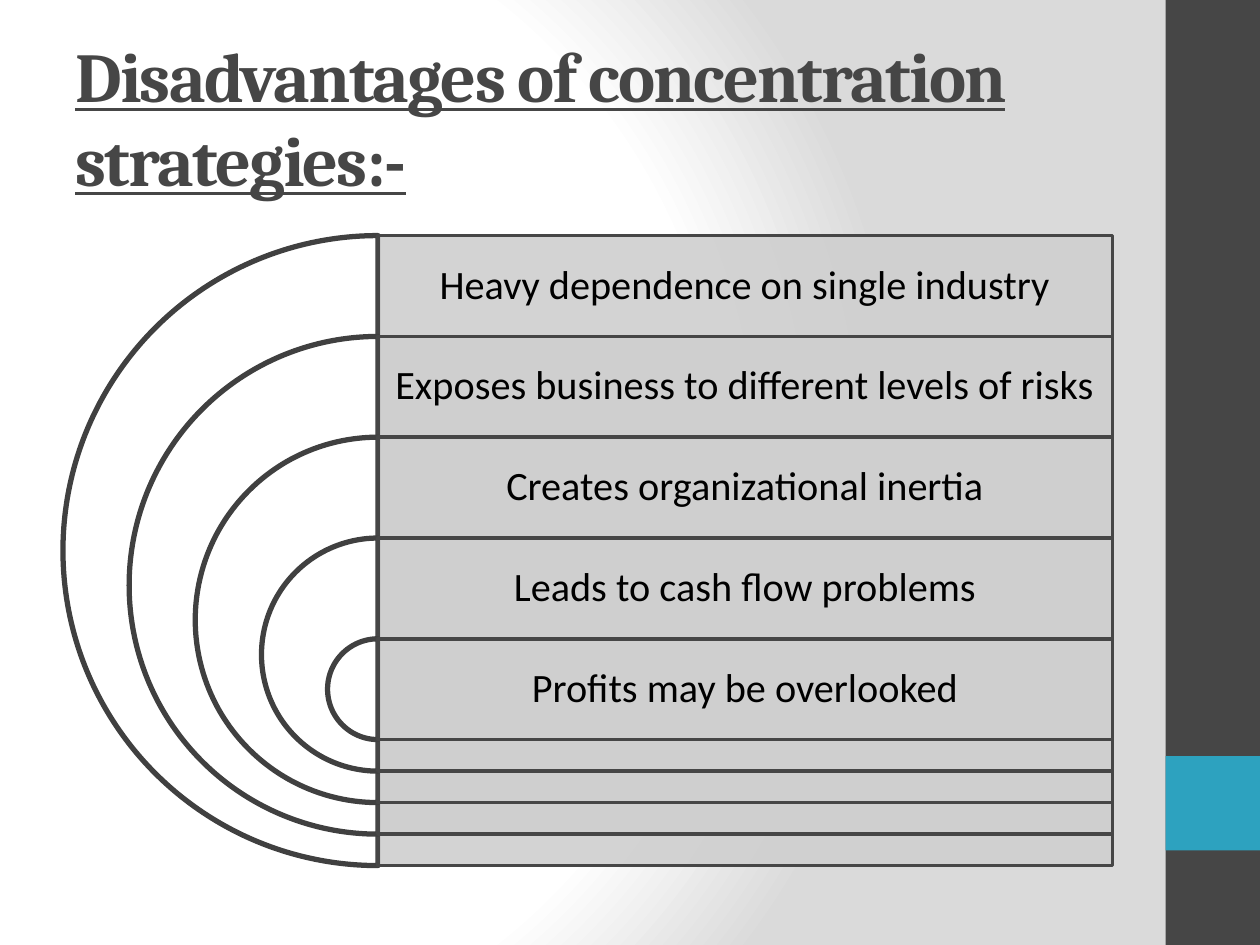
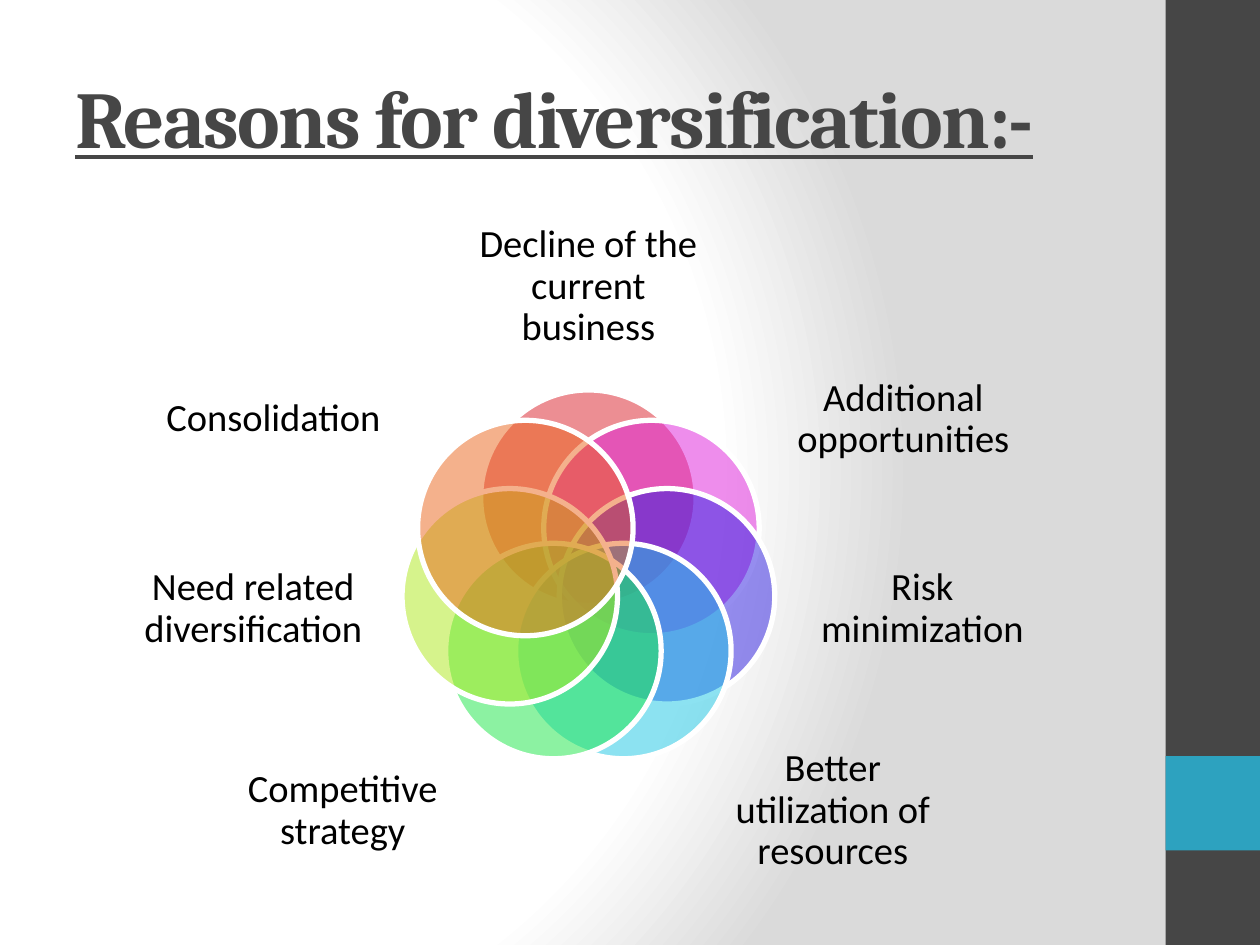
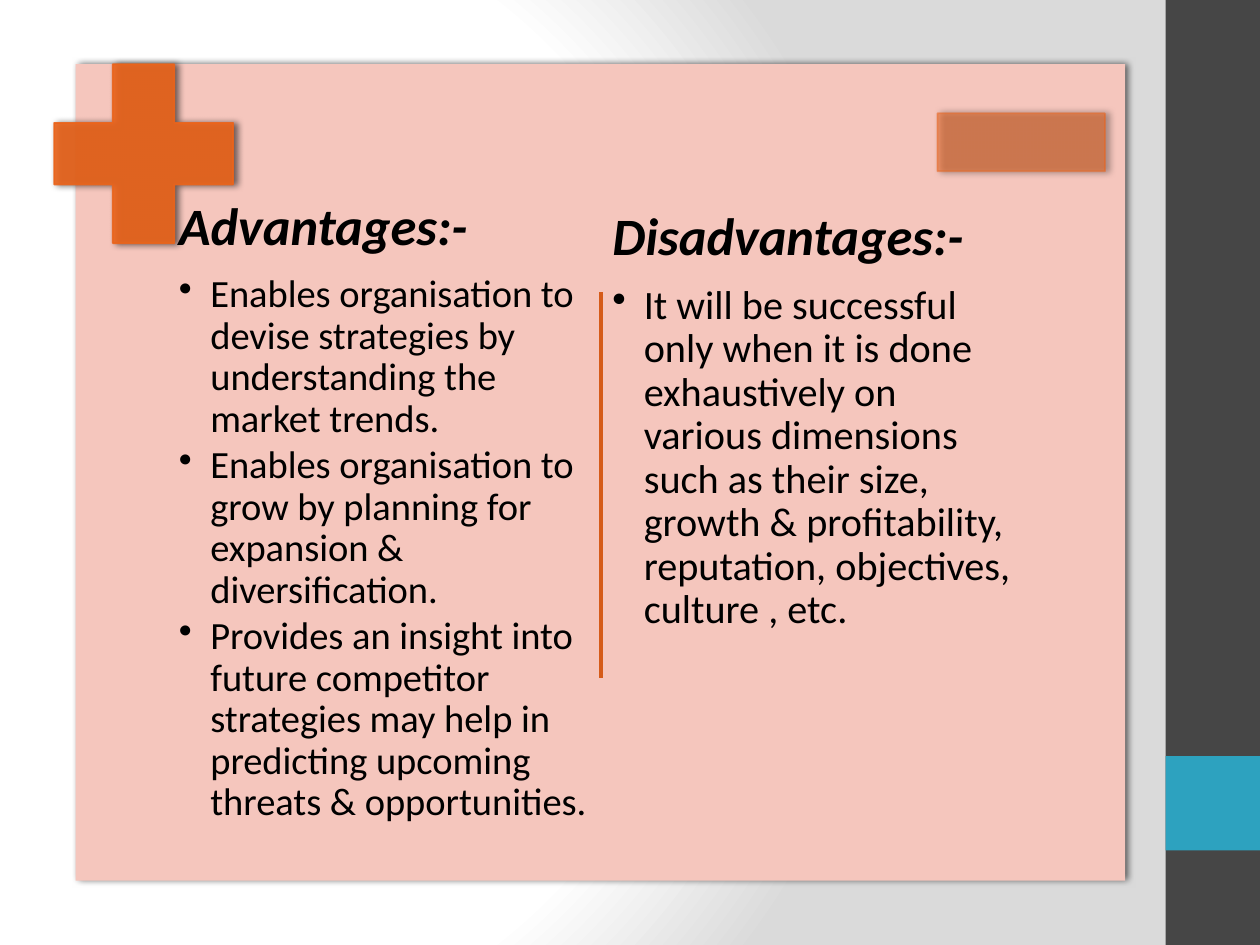
"""Build three slides on concentration strategies, diversification and its trade-offs."""
from math import cos, radians, sin

from lxml import etree
from pptx import Presentation
from pptx.dml.color import RGBColor
from pptx.enum.shapes import MSO_CONNECTOR, MSO_SHAPE
from pptx.enum.text import MSO_ANCHOR, PP_ALIGN
from pptx.oxml import parse_xml
from pptx.oxml.ns import nsdecls, qn
from pptx.util import Inches, Pt

RECT, PIE, OVAL, PLUS = MSO_SHAPE.RECTANGLE, MSO_SHAPE.PIE, MSO_SHAPE.OVAL, MSO_SHAPE.CROSS
STRAIGHT = MSO_CONNECTOR.STRAIGHT
TOP, MIDDLE = MSO_ANCHOR.TOP, MSO_ANCHOR.MIDDLE
LEFT, CENTER = PP_ALIGN.LEFT, PP_ALIGN.CENTER

COLORS = {
    "white": "FFFFFF", "black": "000000", "haze": "DADADA", "dark": "464646",
    "teal": "2DA2BF", "arc": "404040", "bar": "CFCFCF", "panel": "F5C6BD",
    "orange": "EB641B", "divider": "D55B19", "red": "DA1F28", "magenta": "DE1DDA",
    "indigo": "2D1CE1", "cyan": "1BC6E5", "green": "1BE747", "lime": "AEE91B",
}
BACKGROUND = f"""<p:bg {nsdecls("p", "a")}><p:bgPr><a:gradFill rotWithShape="1"><a:gsLst>
<a:gs pos="0"><a:srgbClr val="{COLORS['white']}"/></a:gs>
<a:gs pos="75000"><a:srgbClr val="{COLORS['white']}"/></a:gs>
<a:gs pos="100000"><a:srgbClr val="{COLORS['haze']}"/></a:gs></a:gsLst>
<a:path path="circle"><a:fillToRect l="20000" t="50000" r="100000" b="50000"/></a:path>
</a:gradFill><a:effectLst/></p:bgPr></p:bg>"""
SHADOW = f"""<a:outerShdw {nsdecls("a")} blurRad="50800" dist="25400" dir="0" rotWithShape="0">
<a:srgbClr val="{COLORS['black']}"><a:alpha val="60000"/></a:srgbClr></a:outerShdw>"""


def add_block(slide, kind, box, fill, line=None, width=1, fill_alpha=100, line_alpha=100,
              shadow=False, adjustments=()):
    block = slide.shapes.add_shape(kind, *map(Inches, box))
    for index, value in enumerate(adjustments):
        block.adjustments[index] = value
    block.fill.solid()
    block.fill.fore_color.rgb = RGBColor.from_string(COLORS[fill])
    if line:
        block.line.color.rgb = RGBColor.from_string(COLORS[line])
        block.line.width = Pt(width)
    else:
        block.line.fill.background()
    properties = block._element.spPr
    for color, alpha in zip(properties.iter(qn("a:srgbClr")), (fill_alpha, line_alpha)):
        if alpha < 100:
            etree.SubElement(color, qn("a:alpha"), val=str(alpha * 1000))
    block.shadow.inherit = False
    if shadow:
        properties.find(qn("a:effectLst")).append(parse_xml(SHADOW))


def add_text(slide, box, lines, size, font="Calibri", color="black", inset=0.1,
             anchor=MIDDLE, align=CENTER, spacing=0.9):
    frame = slide.shapes.add_textbox(*map(Inches, box)).text_frame
    frame.word_wrap = True
    frame.vertical_anchor = anchor
    frame.margin_left = frame.margin_right = Inches(inset)
    frame.margin_top = frame.margin_bottom = Inches(inset)
    frame.text = "\n".join(lines)
    for paragraph in frame.paragraphs:
        paragraph.alignment = align
        paragraph.line_spacing = spacing
        paragraph.font.name = font
        paragraph.font.size = Pt(size)
        paragraph.font.color.rgb = RGBColor.from_string(COLORS[color])
    return frame.paragraphs


prs = Presentation()
prs.slide_width, prs.slide_height = Inches(10), Inches(7.5)

titles = [("Disadvantages of concentration strategies:-", 40),
          ("Reasons for diversification:-", 46), None]
for title in titles:
    slide = prs.slides.add_slide(prs.slide_layouts[6])
    slide.element.cSld.insert(0, parse_xml(BACKGROUND))
    add_block(slide, RECT, (9.25, 0, 0.75, 7.5), "dark")
    add_block(slide, RECT, (9.25, 6, 0.75, 0.75), "teal")
    if title:
        wording, size = title
        heading = add_text(slide, (0.5, 0.3, 8.33, 1.25), [wording], size, "Cambria", "dark",
                           align=LEFT, spacing=1.0)[0]
        heading.font.bold = heading.font.underline = True
        heading.runs[0].font._element.set("spc", "-100")
concentration, diversification, tradeoffs = prs.slides

drawbacks = ["Heavy dependence on single industry", "Exposes business to different levels of risks",
             "Creates organizational inertia", "Leads to cash flow problems",
             "Profits may be overlooked"]
axis, row_height, bar_width = 3, 0.8, 5.83
for row, drawback in enumerate(drawbacks):
    top = 1.87 + row * row_height
    diameter = 5 - 1.05 * row
    add_block(concentration, PIE, (axis - diameter / 2, top, diameter, diameter), "white",
              "arc", 3, adjustments=(54, 162))
    add_block(concentration, RECT, (axis, top, bar_width, diameter), "bar", "dark", 2,
              fill_alpha=90)
    add_text(concentration, (axis, top, bar_width, row_height), [drawback], 23)

reasons = [
    ("Decline of the current business", "red", (3.69, 1.75, 1.96, 1.05)),
    ("Additional opportunities", "magenta", (6.24, 2.75, 1.86, 1.16)),
    ("Risk minimization", "indigo", (6.41, 4.22, 1.82, 1.23)),
    ("Better utilization of resources", "cyan", (5.63, 5.87, 1.96, 1.13)),
    ("Competitive strategy", "green", (1.74, 5.87, 1.96, 1.13)),
    ("Need related diversification", "lime", (1.1, 4.22, 1.82, 1.23)),
    ("Consolidation", "orange", (1.24, 2.75, 1.86, 1.16)),
]
center_x, center_y, orbit, petal = 4.67, 4.59, 0.64, 1.71
for index, (reason, color, label_box) in enumerate(reasons):
    angle = radians(360 / len(reasons) * index)
    left = center_x + orbit * sin(angle) - petal / 2
    top = center_y - orbit * cos(angle) - petal / 2
    add_block(diversification, OVAL, (left, top, petal, petal), color, "white", 3, fill_alpha=50)
    add_text(diversification, label_box, [reason], 22, inset=0)

add_block(tradeoffs, RECT, (0.6, 0.51, 8.33, 6.48), "panel", shadow=True)
columns = [
    ((1.36, 1.53, 3.37, 4.77), 22, [
        "Advantages:-",
        "Enables organisation to devise strategies by understanding the market trends.",
        "Enables organisation to grow by planning for expansion & diversification.",
        "Provides an insight into future competitor strategies may help in predicting "
        "upcoming threats & opportunities."]),
    ((4.8, 1.61, 3.37, 4.61), 23, [
        "Disadvantages:-",
        "It will be successful only when it is done exhaustively on various dimensions such as "
        "their size, growth & profitability, reputation, objectives, culture , etc."]),
]
for box, size, lines in columns:
    heading, *points = add_text(tradeoffs, box, lines, size, inset=0.06, anchor=TOP, align=LEFT)
    heading.font.size = Pt(30)
    heading.font.bold = heading.font.italic = True
    heading.space_after = Pt(10)
    for point in points:
        point.level = 1
        point.space_after = Pt(2.7)
        properties = point._p.get_or_add_pPr()
        properties.set("marL", str(Inches(0.25)))
        properties.set("indent", str(Inches(-0.25)))
        bullet = parse_xml(f'<a:buChar {nsdecls("a")} char="•"/>')
        properties.find(qn("a:defRPr")).addprevious(bullet)
add_block(tradeoffs, PLUS, (0.43, 0.51, 1.42, 1.42), "orange", "orange", 1, 90, 90, True, (0.328,))
add_block(tradeoffs, RECT, (7.44, 0.9, 1.33, 0.46), "orange", "orange", 1, 50, 50, True)
divider = tradeoffs.shapes.add_connector(STRAIGHT, Inches(4.77), Inches(2.32),
                                         Inches(4.77), Inches(5.38))
divider.line.color.rgb = RGBColor.from_string(COLORS["divider"])
divider.line.width = Pt(2)
etree.SubElement(divider._element.spPr, qn("a:effectLst"))

prs.save("out.pptx")
